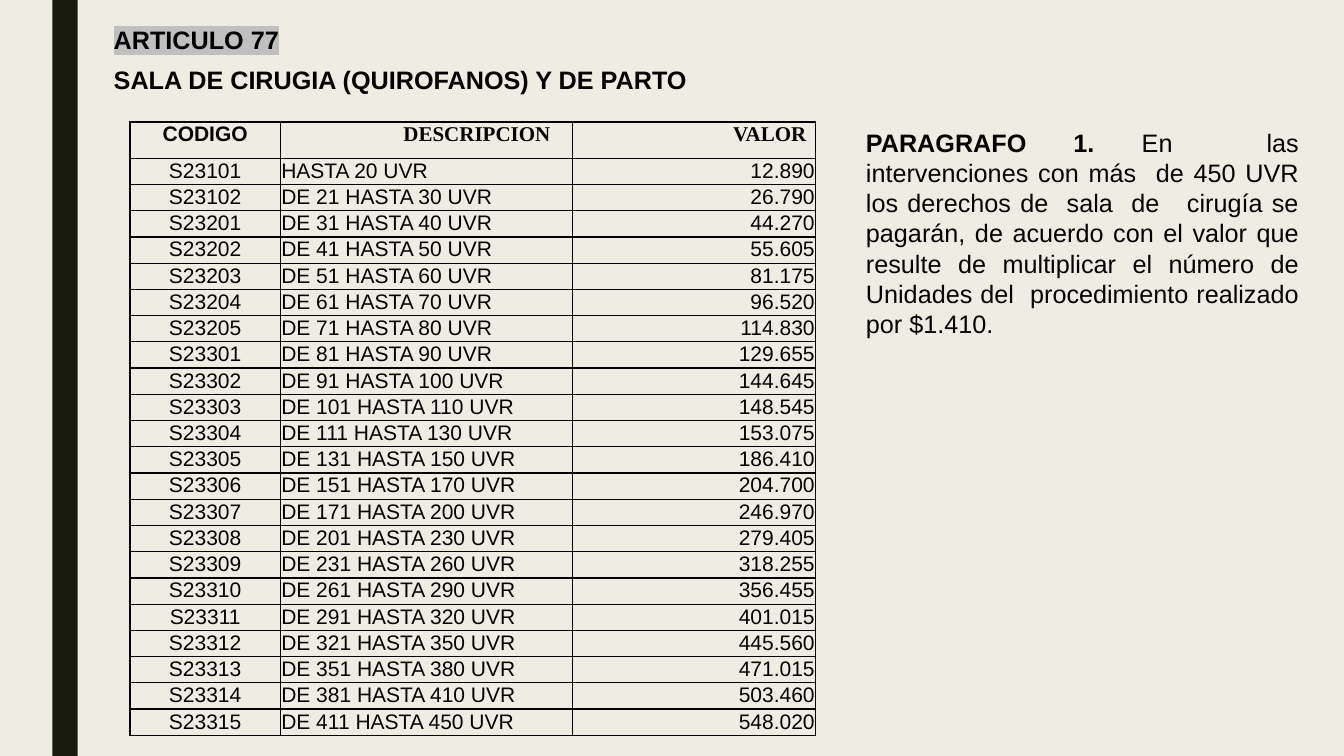
from dataclasses import dataclass

from lxml import etree
from pptx import Presentation
from pptx import util as u
from pptx.dml.color import RGBColor
from pptx.enum import shapes, text
from pptx.oxml import ns

SLIDE_W, SLIDE_H = 13.33, 7.5
LEFT, CENTER = text.PP_ALIGN.LEFT, text.PP_ALIGN.CENTER
RIGHT, JUSTIFY = text.PP_ALIGN.RIGHT, text.PP_ALIGN.JUSTIFY


@dataclass(frozen=True)
class Theme:
    background: str = "EFEDE3"
    band: str = "191B0E"
    ink: str = "000000"
    highlight: str = "C0C0C0"
    font: str = "Arial"
    serif: str = "Times New Roman"
    body_size: float = 18
    table_size: float = 15
    border_width: float = 1


THEME = Theme()

# header, alignment of values, width, header font, header level, header indent
COLUMNS = [
    ("CODIGO", CENTER, 1.49, THEME.font, 0, 0),
    ("DESCRIPCION", LEFT, 2.9, THEME.serif, 2, 1),
    ("VALOR", RIGHT, 2.41, THEME.serif, 3, 1.5),
]

# code, highest UVR of the range, value
RATES = [
    ("S23101", 20, "12.890"), ("S23102", 30, "26.790"),
    ("S23201", 40, "44.270"), ("S23202", 50, "55.605"),
    ("S23203", 60, "81.175"), ("S23204", 70, "96.520"),
    ("S23205", 80, "114.830"), ("S23301", 90, "129.655"),
    ("S23302", 100, "144.645"), ("S23303", 110, "148.545"),
    ("S23304", 130, "153.075"), ("S23305", 150, "186.410"),
    ("S23306", 170, "204.700"), ("S23307", 200, "246.970"),
    ("S23308", 230, "279.405"), ("S23309", 260, "318.255"),
    ("S23310", 290, "356.455"), ("S23311", 320, "401.015"),
    ("S23312", 350, "445.560"), ("S23313", 380, "471.015"),
    ("S23314", 410, "503.460"), ("S23315", 450, "548.020"),
]

PARAGRAFO = (
    "En  las intervenciones con más  de 450 UVR los derechos de  sala  de   "
    "cirugía se pagarán, de acuerdo con el valor que resulte de multiplicar "
    "el número de Unidades del  procedimiento realizado por $1.410."
)


def inches(box):
    return [u.Inches(length) for length in box]


def write(paragraph, words, size=THEME.body_size, font=THEME.font, bold=False,
          align=LEFT, highlight=None):
    """Append one formatted run to the paragraph."""
    paragraph.alignment = align
    run = paragraph.add_run()
    run.text = words
    run.font.size = u.Pt(size)
    run.font.bold = bold
    run.font.color.rgb = RGBColor.from_string(THEME.ink)
    if highlight:
        mark = etree.Element(ns.qn("a:highlight"))
        etree.SubElement(mark, ns.qn("a:srgbClr"), val=highlight)
        run.font.fill._xPr.find(ns.qn("a:solidFill")).addnext(mark)
    run.font.name = font


def add_paragraph_box(slide, box, wrap):
    frame = slide.shapes.add_textbox(*inches(box)).text_frame
    frame.word_wrap = wrap
    frame.auto_size = text.MSO_AUTO_SIZE.SHAPE_TO_FIT_TEXT
    return frame.paragraphs[0]


def add_band(slide, box):
    band = slide.shapes.add_shape(shapes.MSO_SHAPE.RECTANGLE, *inches(box))
    band.shadow.inherit = False
    band.fill.solid()
    band.fill.fore_color.rgb = RGBColor.from_string(THEME.band)
    band.line.fill.background()


def add_headings(slide, box):
    left, top, width, height = box
    article = add_paragraph_box(slide, (left, top, 1.86, height / 2), wrap=False)
    write(article, "ARTICULO 77", bold=True, highlight=THEME.highlight)
    subject = add_paragraph_box(
        slide, (left, top + height / 2, width, height / 2), wrap=False)
    write(subject, "SALA DE CIRUGIA (QUIROFANOS) Y DE PARTO", bold=True)


def format_cell(cell):
    """Clear the fill, tighten the margins and draw the four borders."""
    cell.margin_left = cell.margin_right = cell.margin_top = u.Inches(0.01)
    cell.margin_bottom = 0
    properties = cell._tc.get_or_add_tcPr()
    for side in ("lnL", "lnR", "lnT", "lnB"):
        border = etree.SubElement(properties, ns.qn(f"a:{side}"),
                                  w=str(u.Pt(THEME.border_width)))
        fill = etree.SubElement(border, ns.qn("a:solidFill"))
        etree.SubElement(fill, ns.qn("a:srgbClr"), val=THEME.ink)
    cell.fill.background()


def rate_rows():
    previous = 0
    for code, highest, value in RATES:
        start = f"DE {previous + 1} " if previous else ""
        yield code, f"{start}HASTA {highest} UVR", value
        previous = highest


def add_rates(slide, box, header_height=0.36):
    table = slide.shapes.add_table(
        len(RATES) + 1, len(COLUMNS), *inches(box)).table
    table.first_row = table.horz_banding = False
    for row in table.rows:
        row.height = u.Inches((box[3] - header_height) / len(RATES))
    table.rows[0].height = u.Inches(header_height)
    for cell in table.iter_cells():
        format_cell(cell)

    for c, (header, _, width, font, level, indent) in enumerate(COLUMNS):
        table.columns[c].width = u.Inches(width)
        paragraph = table.cell(0, c).text_frame.paragraphs[0]
        paragraph.level = level
        paragraph._p.get_or_add_pPr().set("marL", str(u.Inches(indent)))
        write(paragraph, header, size=THEME.table_size, font=font, bold=True,
              align=CENTER)
    for r, values in enumerate(rate_rows(), start=1):
        for c, value in enumerate(values):
            write(table.cell(r, c).text_frame.paragraphs[0], value,
                  size=THEME.table_size, align=COLUMNS[c][1])


def add_note(slide, box):
    note = add_paragraph_box(slide, box, wrap=True)
    write(note, "PARAGRAFO 1. ", bold=True, align=JUSTIFY)
    write(note, PARAGRAFO, align=JUSTIFY)


def main():
    deck = Presentation()
    deck.slide_width, deck.slide_height = inches((SLIDE_W, SLIDE_H))
    slide = deck.slides.add_slide(deck.slide_layouts[6])
    slide.background.fill.solid()
    slide.background.fill.fore_color.rgb = RGBColor.from_string(THEME.background)
    content_top = 1.21
    add_band(slide, (0.52, 0, 0.25, SLIDE_H))
    add_headings(slide, (1.03, 0.19, 5.94, 0.8))
    add_rates(slide, (1.29, content_top, 6.8, 6.06))
    add_note(slide, (8.49, content_top, 4.49, 2.22))
    deck.save("out.pptx")


if __name__ == "__main__":
    main()
